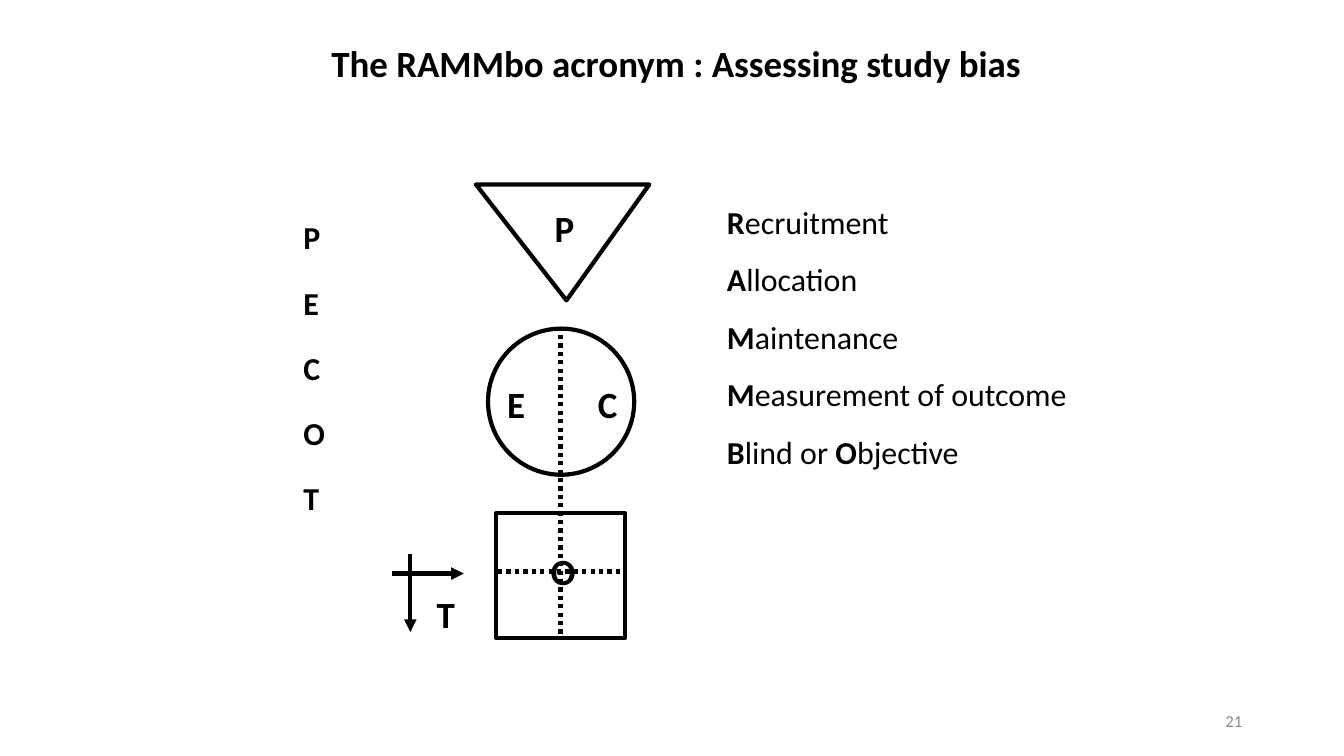
import pptx
import pptx.dml.color
import pptx.enum.dml
import pptx.enum.shapes
import pptx.enum.text
import pptx.oxml
import pptx.oxml.ns
import pptx.util

Inches = pptx.util.Inches
Pt = pptx.util.Pt
Shape = pptx.enum.shapes.MSO_SHAPE
Align = pptx.enum.text.PP_ALIGN
Anchor = pptx.enum.text.MSO_ANCHOR
Fit = pptx.enum.text.MSO_AUTO_SIZE
Dash = pptx.enum.dml.MSO_LINE
INK = "000000"
GREY = "8C8C8C"


def paint(hue):
    """Turn a hex string into a colour."""
    return pptx.dml.color.RGBColor.from_string(hue)


def apply(item, form):
    """Set each attribute named in a dict of format values."""
    for name, value in form.items():
        setattr(item, name, value)


def write(slide, box, paras, size, hue=INK, frame=None, para=None):
    """Add a text box; each paragraph is a list of (text, bold) runs."""
    text = slide.shapes.add_textbox(*map(Inches, box)).text_frame
    apply(text, {"word_wrap": True, "margin_left": Inches(0.09),
                 "margin_right": Inches(0.09), "margin_top": Inches(0.05),
                 "margin_bottom": Inches(0.05), **(frame or {})})
    for i, runs in enumerate(paras):
        line = text.add_paragraph() if i else text.paragraphs[0]
        apply(line, para or {})
        for words, bold in runs:
            run = line.add_run()
            run.text = words
            apply(run.font, {"name": "Calibri", "size": Pt(size), "bold": bold})
            run.font.color.rgb = paint(hue)
    return text


def stroke(item, dash=None):
    """Give a shape or connector its heavy black line."""
    item.line.color.rgb = paint(INK)
    apply(item.line, {"width": Pt(3), "dash_style": dash})


def outline(slide, kind, box):
    """Add an unfilled preset shape."""
    shape = slide.shapes.add_shape(kind, *map(Inches, box))
    shape.shadow.inherit = False
    shape.fill.background()
    stroke(shape)
    return shape


def link(slide, start, end, dash=None, arrow=False):
    """Add a straight line, dotted or with an arrowhead if asked."""
    line = slide.shapes.add_connector(
        pptx.enum.shapes.MSO_CONNECTOR.STRAIGHT, *map(Inches, start + end))
    stroke(line, dash)
    if arrow:
        tip = pptx.oxml.parse_xml(
            f'<a:tailEnd {pptx.oxml.ns.nsdecls("a")} type="triangle"/>')
        line.line._get_or_add_ln().append(tip)
    line._element.spPr.append(pptx.oxml.parse_xml(
        f'<a:effectLst {pptx.oxml.ns.nsdecls("a")}/>'))
    return line


def title(slide, box):
    """Write the centred heading."""
    write(slide, box, [[("The RAMMbo acronym : Assessing study bias", True)]],
          26.4, frame={"vertical_anchor": Anchor.MIDDLE},
          para={"alignment": Align.CENTER})


def figure(slide, box):
    """Draw the triangle, circle, square and time arrows with their letters."""
    left, top = box[:2]

    def at(x, y):
        return left + x, top + y

    marks = {"P": (1.52, 0.09), "E": (1.05, 1.84), "C": (1.95, 1.84),
             "O": (1.48, 3.5), "T": (0.35, 3.92)}
    for mark, spot in marks.items():
        write(slide, at(*spot) + (0.45, 0.67), [[(mark, True)]], 26.4,
              frame={"vertical_anchor": Anchor.MIDDLE})
    link(slide, at(0.18, 3.67), at(0.18, 4.44), arrow=True)
    outline(slide, Shape.OVAL, at(0.95, 1.43) + (1.45, 1.45))
    square = outline(slide, Shape.RECTANGLE, at(1.03, 3.26) + (1.28, 1.24))
    split = link(slide, at(1.67, 1.41), at(1.67, 4.5), Dash.ROUND_DOT)
    split.end_connect(square, 2)
    people = outline(slide, Shape.ISOSCELES_TRIANGLE,
                     at(0.83, 0) + (1.72, 1.15))
    people.rotation = 180
    people.adjustments[0] = 0.478
    link(slide, at(1.05, 3.84), at(2.29, 3.84), Dash.ROUND_DOT)
    link(slide, at(0, 3.86), at(0.71, 3.86), arrow=True)


def pecot(slide, box):
    """List the letters of PECOT."""
    write(slide, box, [[(mark, True)] for mark in "PECOT"], 22.8,
          frame={"auto_size": Fit.SHAPE_TO_FIT_TEXT},
          para={"line_spacing": 1.3, "space_before": Pt(11)})


def rammbo(slide, box):
    """List the terms of RAMMbo with bold initials."""
    terms = ["Recruitment", "Allocation", "Maintenance",
             "Measurement of outcome"]
    paras = [[(term[0], True), (term[1:], False)] for term in terms]
    paras.append([("B", True), ("lind or ", False),
                  ("O", True), ("bjective", False)])
    text = write(slide, box, paras, 22.8,
                 frame={"auto_size": Fit.SHAPE_TO_FIT_TEXT},
                 para={"line_spacing": 1.1, "space_before": Pt(11)})
    for line in text.paragraphs:
        props = line._p.get_or_add_pPr()
        props.set("marL", str(Inches(0.3)))
        props.set("indent", str(Inches(-0.3)))


def number(slide, box):
    """Write the slide number."""
    write(slide, box, [[("21", False)]], 12, GREY,
          {"vertical_anchor": Anchor.MIDDLE, "margin_right": Inches(0.1)},
          {"alignment": Align.RIGHT})


def main():
    """Build and save the slide."""
    deck = pptx.Presentation()
    apply(deck, {"slide_width": Inches(13.33), "slide_height": Inches(7.5)})
    slide = deck.slides.add_slide(deck.slide_layouts[6])
    figure(slide, (3.89, 1.83, 2.55, 4.59))
    pecot(slide, (2.92, 2, 0.66, 3.32))
    rammbo(slide, (7.12, 1.92, 3.9, 2.95))
    title(slide, (1.68, 0.08, 10.06, 1.08))
    number(slide, (9.42, 6.95, 3, 0.4))
    deck.save("out.pptx")


if __name__ == "__main__":
    main()
